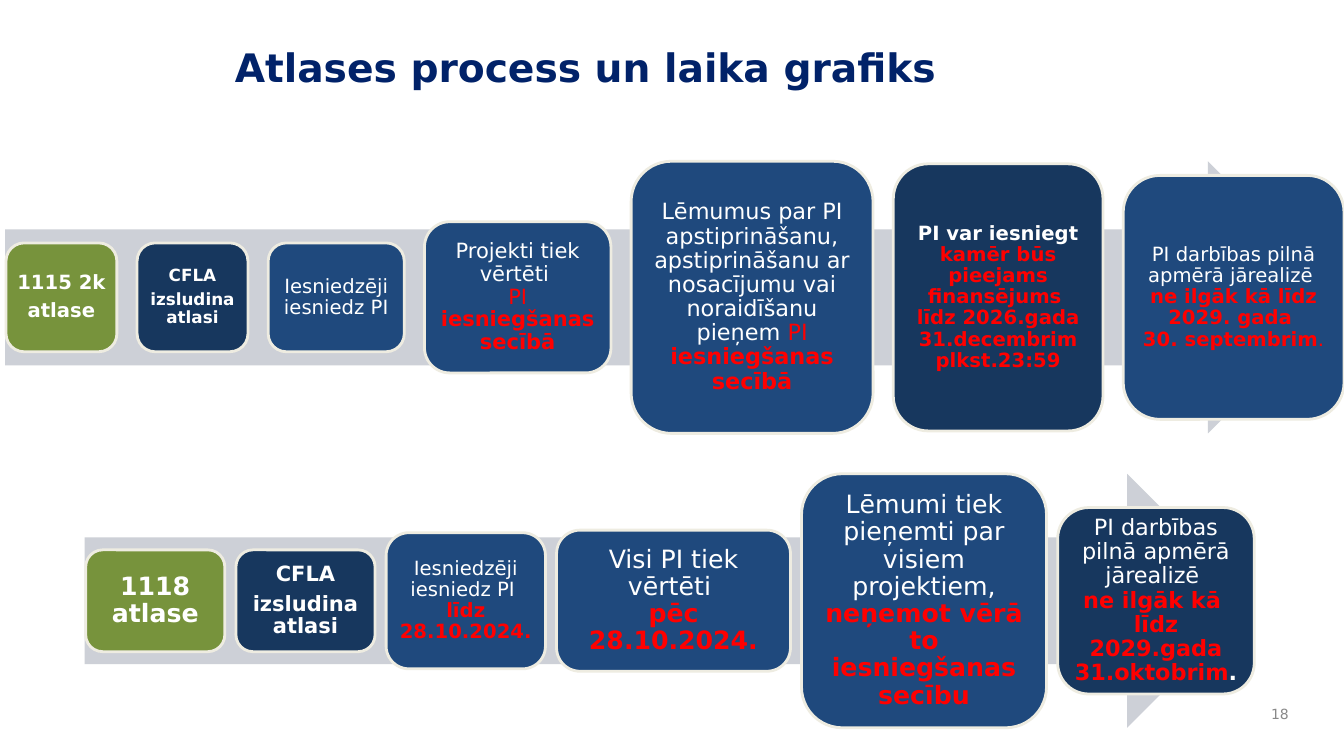
from copy import deepcopy

from pptx import Presentation
from pptx.dml.color import RGBColor
from pptx.enum.shapes import MSO_SHAPE
from pptx.enum.text import MSO_ANCHOR, PP_ALIGN
from pptx.util import Inches, Pt

FONT = "DejaVu Sans"
WHITE = RGBColor(0xFF, 0xFF, 0xFF)
RED = RGBColor(0xFF, 0x00, 0x00)
GREEN = RGBColor(0x77, 0x93, 0x3C)
NAVY = RGBColor(0x17, 0x37, 0x5E)
BLUE = RGBColor(0x1F, 0x49, 0x7D)
CREAM = RGBColor(0xEE, 0xEC, 0xE1)
ARROW_GRAY = RGBColor(0xCD, 0xD0, 0xD7)
NUMBER_GRAY = RGBColor(0x89, 0x89, 0x89)
TITLE_BLUE = RGBColor(0x01, 0x22, 0x69)


def write_text(shape, paragraphs, size, align=PP_ALIGN.CENTER, anchor=MSO_ANCHOR.MIDDLE,
               margins=(0.1, 0.05), line_spacing=1.0, space_after=0):
    """Fill a shape; each paragraph is a list of (text, colour, bold) runs."""
    frame = shape.text_frame
    frame.word_wrap = True
    frame.vertical_anchor = anchor
    frame.margin_left = frame.margin_right = Inches(margins[0])
    frame.margin_top = frame.margin_bottom = Inches(margins[1])
    for index, runs in enumerate(paragraphs):
        paragraph = frame.add_paragraph() if index else frame.paragraphs[0]
        paragraph.alignment = align
        paragraph.line_spacing = line_spacing
        paragraph.space_after = Pt(space_after)
        for text, color, bold in runs:
            for line_number, line in enumerate(text.split("\n")):
                if line_number:
                    # The break takes the run format so that it keeps the line height
                    paragraph.add_line_break()
                    paragraph._p[-1].append(deepcopy(run._r.rPr))
                if line:
                    run = paragraph.add_run()
                    run.text = line
                    run.font.name = FONT
                    run.font.size = Pt(size)
                    run.font.bold = bold
                    run.font.color.rgb = color


presentation = Presentation()
presentation.slide_width = Inches(13.33)
presentation.slide_height = Inches(7.5)
slide = presentation.slides.add_slide(presentation.slide_layouts[5])

title = slide.shapes.title
title.left, title.top = Inches(2.23), Inches(0.38)
title.width, title.height = Inches(10.97), Inches(0.85)
write_text(title, [[("Atlases process un laika grafiks", TITLE_BLUE, True)]], 28,
           align=PP_ALIGN.LEFT, anchor=MSO_ANCHOR.TOP)

# Each step: width, height, fill, text size, paragraphs
steps_1115 = [
    (1.1, 1.08, GREEN, 14, [[("1115 2k", WHITE, True)], [("atlase", WHITE, True)]]),
    (1.1, 1.08, NAVY, 12, [[("CFLA", WHITE, True)], [("izsludina atlasi", WHITE, True)]]),
    (1.35, 1.08, BLUE, 14, [[("Iesniedzēji iesniedz PI", WHITE, False)]]),
    (1.85, 1.5, BLUE, 15, [[("Projekti tiek vērtēti \n", WHITE, False), ("PI ", RED, False),
                            ("iesniegšanas secībā", RED, True)]]),
    (2.4, 2.7, BLUE, 16, [[("Lēmumus par PI apstiprināšanu, apstiprināšanu ar nosacījumu "
                            "vai noraidīšanu pieņem ", WHITE, False), ("PI ", RED, False),
                           ("iesniegšanas secībā", RED, True)]]),
    (2.08, 2.65, NAVY, 14, [[("PI var iesniegt ", WHITE, True),
                             ("kamēr būs pieejams finansējums \n"
                              "līdz 2026.gada 31.decembrim plkst.23:59", RED, True)]]),
    (2.19, 2.42, BLUE, 14, [[("PI darbības pilnā apmērā jārealizē \n", WHITE, False),
                             ("ne ilgāk kā līdz 2029. gada \n30. septembrim", RED, True),
                             (".", RED, False)]]),
]
steps_1118 = [
    (1.38, 1.01, GREEN, 18, [[("1118 atlase", WHITE, True)]]),
    (1.38, 1.01, NAVY, 15, [[("CFLA", WHITE, True)], [("izsludina atlasi", WHITE, True)]]),
    (1.58, 1.35, BLUE, 14, [[("Iesniedzēji iesniedz PI \n", WHITE, False),
                             ("līdz 28.10.2024.", RED, True)]]),
    (2.32, 1.4, BLUE, 18, [[("Visi PI tiek vērtēti \n", WHITE, False),
                            ("pēc 28.10.2024.", RED, True)]]),
    (2.43, 2.52, BLUE, 18, [[("Lēmumi tiek pieņemti par visiem projektiem, ", WHITE, False),
                             ("neņemot vērā to iesniegšanas secību", RED, True)]]),
    (1.95, 1.85, NAVY, 16, [[("PI darbības pilnā apmērā jārealizē \n", WHITE, False),
                             ("ne ilgāk kā \nlīdz 2029.gada 31.oktobrim", RED, True),
                             (".", WHITE, True)]]),
]

# Each process: arrow left, width and height, vertical centre, gap, steps
processes = [
    (0.05, 13.28, 2.7, 2.95, 0.2, steps_1115),
    (0.84, 11.6, 2.52, 5.96, 0.11, steps_1118),
]
for arrow_left, arrow_width, arrow_height, center, gap, steps in processes:
    group = slide.shapes.add_group_shape()
    arrow = group.shapes.add_shape(
        MSO_SHAPE.RIGHT_ARROW, Inches(arrow_left), Inches(center - arrow_height / 2),
        Inches(arrow_width), Inches(arrow_height))
    arrow.shadow.inherit = False
    arrow.fill.solid()
    arrow.fill.fore_color.rgb = ARROW_GRAY
    arrow.line.fill.background()

    left = arrow_left + 0.01
    for width, height, fill, size, paragraphs in steps:
        box = group.shapes.add_shape(
            MSO_SHAPE.ROUNDED_RECTANGLE, Inches(left), Inches(center - height / 2),
            Inches(width), Inches(height))
        box.shadow.inherit = False
        box.fill.solid()
        box.fill.fore_color.rgb = fill
        box.line.color.rgb = CREAM
        box.line.width = Pt(2)
        write_text(box, paragraphs, size, margins=(size / 240, size / 240),
                   line_spacing=0.9, space_after=0.35 * size)
        left += width + gap

page_number = slide.shapes.add_textbox(Inches(12.44), Inches(6.92), Inches(0.44), Inches(0.33))
write_text(page_number, [[("18", NUMBER_GRAY, False)]], 10, align=PP_ALIGN.RIGHT)

presentation.save("out.pptx")
